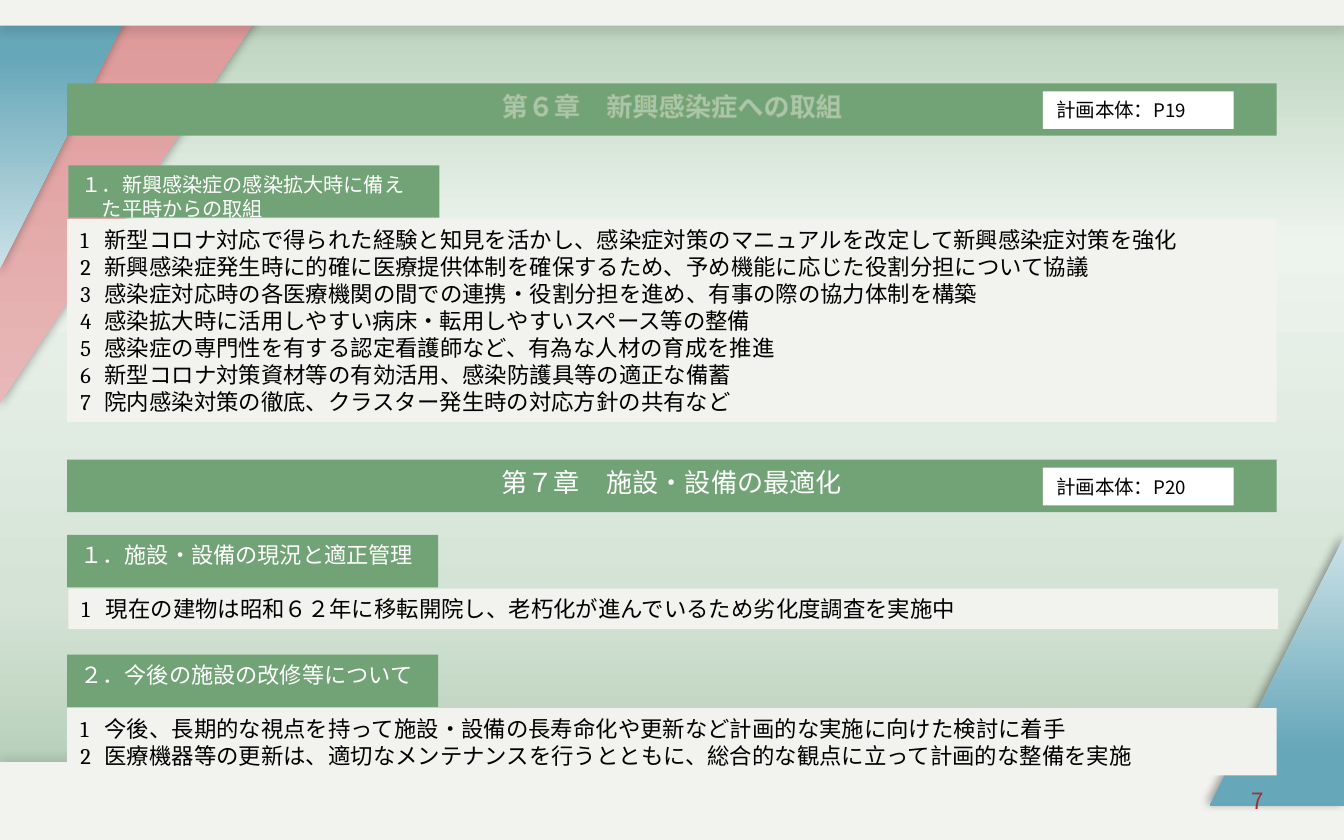
from lxml import etree
from pptx import Presentation
from pptx.dml.color import RGBColor
from pptx.enum.shapes import MSO_SHAPE as SHAPE
from pptx.enum.text import MSO_ANCHOR as ANCHOR, PP_ALIGN as ALIGN
from pptx.oxml import parse_xml
from pptx.oxml.ns import nsdecls, qn
from pptx.util import Inches, Pt

GREEN = RGBColor(0x72, 0xA3, 0x76)
PAPER = RGBColor(0xF2, 0xF2, 0xEF)
WHITE = RGBColor(0xFF, 0xFF, 0xFF)
BLACK = RGBColor(0, 0, 0)
RED = RGBColor(0x9D, 0x32, 0x32)
GOLD = RGBColor(0xCE, 0xC5, 0x97)
BACK_STOPS = [(0, RGBColor(0xAA, 0xC8, 0xAD)), (29, RGBColor(0xD5, 0xE3, 0xD6)),
              (71, RGBColor(0xED, 0xF4, 0xEE)), (100, RGBColor(0xB8, 0xD1, 0xBA))]
PINK_STOPS = [(0, RGBColor(0xE8, 0xB7, 0xB7)), (100, RGBColor(0xDE, 0x98, 0x98))]
BLUE_STOPS = [(0, RGBColor(0xCB, 0xE1, 0xE7)), (79, RGBColor(0x66, 0xA7, 0xB9))]
GOTHIC, SERIF = "Noto Sans CJK JP", "Cambria"

prs = Presentation()
prs.slide_width, prs.slide_height = Inches(10), Inches(6.25)
s = prs.slides.add_slide(prs.slide_layouts[6])


def decorate(sp, stops=None, angle=270, shadow=None):
    """Style a backdrop shape: stops run clockwise at angle; shadow is (alpha %, blur, distance, direction)."""
    sp.shadow.inherit = False
    sp.line.fill.background()
    if stops:
        sp.fill.gradient()
        grad = sp._element.spPr.find(qn("a:gradFill"))
        gs_list = grad.find(qn("a:gsLst"))
        gs_list.clear()
        for pos, color in stops:
            gs = etree.SubElement(gs_list, qn("a:gs"), pos=str(pos * 1000))
            etree.SubElement(gs, qn("a:srgbClr"), val=str(color))
        grad.find(qn("a:lin")).set("ang", str(angle * 60000))
    else:
        sp.fill.solid()
        sp.fill.fore_color.rgb = PAPER
    if shadow:
        alpha, blur, dist, direction = shadow
        sp._element.spPr.find(qn("a:effectLst")).append(parse_xml(
            f'<a:outerShdw {nsdecls("a")} blurRad="{Pt(blur)}" dist="{Pt(dist)}" '
            f'dir="{direction * 60000}" rotWithShape="0"><a:srgbClr val="000000">'
            f'<a:alpha val="{alpha * 1000}"/></a:srgbClr></a:outerShdw>'))


def add_box(x, y, w, h, lines, fill, color, size, font=GOTHIC, align=ALIGN.LEFT):
    sp = s.shapes.add_shape(SHAPE.RECTANGLE, Inches(x), Inches(y), Inches(w), Inches(h))
    sp.shadow.inherit = False
    sp.fill.solid()
    sp.fill.fore_color.rgb = fill
    sp.line.fill.background()
    tf = sp.text_frame
    tf.word_wrap = True
    tf.vertical_anchor = ANCHOR.TOP
    tf.text = "\n".join(lines)
    for p in tf.paragraphs:
        p.alignment = align
        p.line_spacing = Pt(round(size * 1.21, 1))
        p.font.size, p.font.name, p.font.color.rgb = Pt(size), font, color
    return sp


# Backdrop
sp = s.shapes.add_shape(SHAPE.FLOWCHART_PROCESS, 0, 0, prs.slide_width, prs.slide_height)
decorate(sp, BACK_STOPS)
LEFT_SHADOW, RIGHT_SHADOW = (30, 5, 1.8, 90), (20, 5, 2, 225)
bands = [(5.67, 0.58, 270), (0, 0.19, 90)]
corners = [
    [([(0, 0.01), (1.67, 0.01), (0.01, 2.66)], PINK_STOPS, 270, LEFT_SHADOW),
     ([(0, 0), (1.32, 0), (0, 2.11)], BLUE_STOPS, 270, LEFT_SHADOW)],
    [([(10, 5.67), (8.87, 5.67), (10, 3.85)], PINK_STOPS, 90, RIGHT_SHADOW),
     ([(10, 5.67), (9.2, 5.67), (10, 4.39)], BLUE_STOPS, 90, RIGHT_SHADOW)],
]
# The bottom band lies under the left corner, the top band over it
for (top, height, direction), _ in zip(bands[:1], corners):
    sp = s.shapes.add_shape(SHAPE.RECTANGLE, 0, Inches(top), prs.slide_width, Inches(height))
    decorate(sp, shadow=(10, 5, 3, direction))
for band, corner in zip((None, bands[1]), corners):
    if band:
        top, height, direction = band
        sp = s.shapes.add_shape(SHAPE.RECTANGLE, 0, Inches(top), prs.slide_width, Inches(height))
        decorate(sp, shadow=(10, 5, 3, direction))
    for points, stops, angle, shadow in corner:
        builder = s.shapes.build_freeform(*points[0], scale=Inches(1))
        builder.add_line_segments(points[1:], close=True)
        decorate(builder.convert_to_shape(), stops, angle, shadow)

# Chapter bars with page references
chapters = [(0.62, "第６章　新興感染症への取組", "P19"), (3.42, "第７章　施設・設備の最適化", "P20")]
for top, title, page in chapters:
    bar = add_box(0.5, top, 9, 0.39, [title], GREEN, WHITE, 14, align=ALIGN.CENTER)
    if top == chapters[0][0]:
        r = bar.text_frame.paragraphs[0].runs[0]
        r.font.bold = True
        r._r.get_or_add_rPr().insert(0, parse_xml(
            f'<a:ln {nsdecls("a")} w="0"><a:solidFill><a:srgbClr val="{GOLD}">'
            '<a:alpha val="40000"/></a:srgbClr></a:solidFill></a:ln>'))
    ref = add_box(7.76, top + 0.06, 1.42, 0.28, ["計画本体："], WHITE, BLACK, 10.5)
    r = ref.text_frame.paragraphs[0].add_run()
    r.text = page
    r.font.size = Pt(10)

# Sections: heading left and top, size, heading, body left, top and height, items
sections = [
    (0.51, 1.23, 10.8, ["１．新興感染症の感染拡大時に備え", "　た平時からの取組"], 0.5, 1.63, 1.51, [
        "新型コロナ対応で得られた経験と知見を活かし、感染症対策のマニュアルを改定して新興感染症対策を強化",
        "新興感染症発生時に的確に医療提供体制を確保するため、予め機能に応じた役割分担について協議",
        "感染症対応時の各医療機関の間での連携・役割分担を進め、有事の際の協力体制を構築",
        "感染拡大時に活用しやすい病床・転用しやすいスペース等の整備",
        "感染症の専門性を有する認定看護師など、有為な人材の育成を推進",
        "新型コロナ対策資材等の有効活用、感染防護具等の適正な備蓄",
        "院内感染対策の徹底、クラスター発生時の対応方針の共有など"]),
    (0.5, 3.98, 11.9, ["１．施設・設備の現況と適正管理"], 0.51, 4.38, 0.3, [
        "現在の建物は昭和６２年に移転開院し、老朽化が進んでいるため劣化度調査を実施中"]),
    (0.5, 4.87, 11.9, ["２．今後の施設の改修等について"], 0.5, 5.27, 0.5, [
        "今後、長期的な視点を持って施設・設備の長寿命化や更新など計画的な実施に向けた検討に着手",
        "医療機器等の更新は、適切なメンテナンスを行うとともに、総合的な観点に立って計画的な整備を実施"]),
]
for x, y, size, heading, body_x, body_y, body_h, items in sections:
    add_box(x, y, 2.76, 0.39, heading, GREEN, WHITE, size)
    numbered = [f"{n}\t{item}" for n, item in enumerate(items, 1)]
    body = add_box(body_x, body_y, 9, body_h, numbered, PAPER, BLACK, 12, SERIF)
    for p in body.text_frame.paragraphs:
        pPr = p._p.get_or_add_pPr()
        pPr.set("marL", str(Inches(0.18)))
        pPr.set("indent", str(-Inches(0.18)))

# Page number
tf = s.shapes.add_textbox(Inches(7.17), Inches(5.79), Inches(2.33), Inches(0.33)).text_frame
tf.word_wrap = True
tf.vertical_anchor = ANCHOR.MIDDLE
p = tf.paragraphs[0]
p.text = "7"
p.alignment = ALIGN.RIGHT
p.font.size, p.font.name, p.font.color.rgb = Pt(12), GOTHIC, RED

prs.save("out.pptx")
